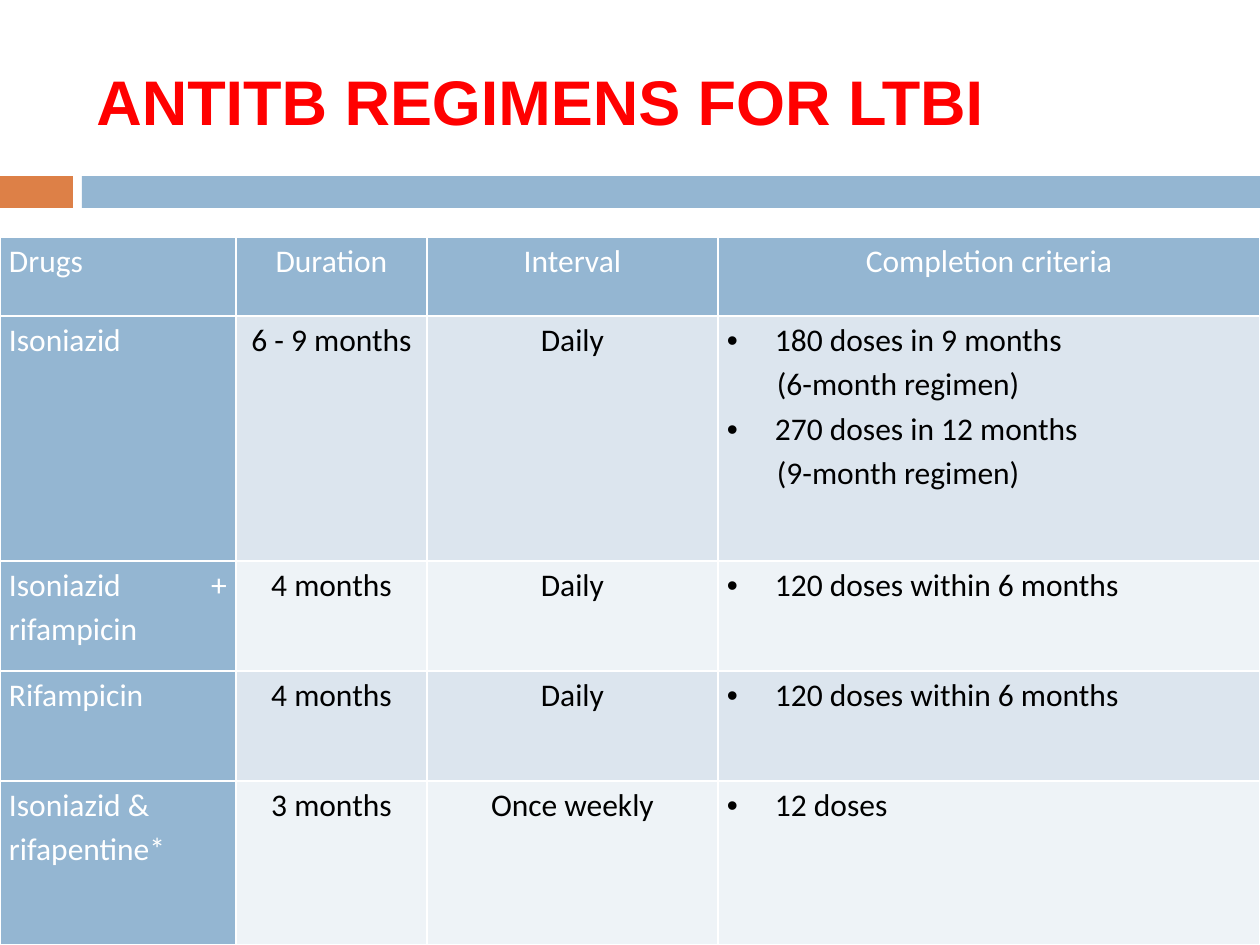
from dataclasses import dataclass

from lxml.etree import SubElement
from pptx import Presentation
from pptx.dml.color import RGBColor
from pptx.enum.shapes import MSO_SHAPE as Shape
from pptx.enum.text import MSO_ANCHOR as Anchor, PP_ALIGN as Align
from pptx.oxml import parse_xml
from pptx.oxml.ns import nsdecls, qn
from pptx.util import Emu, Pt

EMU_PER_PX = 914400 / 126

RED = RGBColor(0xFF, 0x00, 0x00)
ORANGE = RGBColor(0xDD, 0x80, 0x47)
BLUE = RGBColor(0x94, 0xB6, 0xD2)
BAND_DARK = RGBColor(0xDC, 0xE5, 0xEE)
BAND_LIGHT = RGBColor(0xEE, 0xF3, 0xF7)
WHITE = RGBColor(0xFF, 0xFF, 0xFF)
BLACK = RGBColor(0x00, 0x00, 0x00)

COLUMN_WIDTHS = (236, 191, 291, 542)
HEADINGS = ("Drugs", "Duration", "Interval", "Completion criteria")
HEADING_HEIGHT = 79
BULLET_INDENT = 48
CELL_MARGIN = 9


@dataclass(frozen=True)
class Bar:
    left: int
    width: int
    color: RGBColor


@dataclass(frozen=True)
class Line:
    text: str
    align: Align = Align.CENTER
    bullet: bool = False
    indent: int = 0


@dataclass(frozen=True)
class Criterion:
    doses: str
    note: str = ""


@dataclass(frozen=True)
class Regimen:
    drugs: str
    duration: str
    interval: str
    criteria: tuple[Criterion, ...]
    height: int
    drugs_align: Align = Align.JUSTIFY


BARS = (Bar(0, 73, ORANGE), Bar(82, 1178, BLUE))

WITHIN_SIX_MONTHS = (Criterion("120 doses within 6 months"),)
REGIMENS = (
    Regimen("Isoniazid", "6 - 9 months", "Daily",
            (Criterion("180 doses in 9 months", "(6-month regimen)"),
             Criterion("270 doses in 12 months", "(9-month regimen)")), 245),
    Regimen("Isoniazid + rifampicin", "4 months", "Daily", WITHIN_SIX_MONTHS, 110),
    Regimen("Rifampicin", "4 months", "Daily", WITHIN_SIX_MONTHS, 110),
    Regimen("Isoniazid & rifapentine*", "3 months", "Once weekly",
            (Criterion("12 doses"),), 164, Align.LEFT),
)


def px(length: int) -> Emu:
    return Emu(round(length * EMU_PER_PX))


def draw_bar(slide, bar: Bar) -> None:
    rect = slide.shapes.add_shape(Shape.RECTANGLE, px(bar.left), px(176), px(bar.width), px(32))
    rect.shadow.inherit = False
    rect.fill.solid()
    rect.fill.fore_color.rgb = bar.color
    rect.line.fill.background()


def draw_title(slide, text: str) -> None:
    title = slide.shapes.add_textbox(px(84), px(32), px(1124), px(136))
    frame = title.text_frame
    frame.word_wrap = True
    frame.vertical_anchor = Anchor.MIDDLE
    paragraph = frame.paragraphs[0]
    paragraph.text = text
    font = paragraph.font
    font.name, font.size, font.bold = "Arial", Pt(36), True
    font.color.rgb = RED


def set_borders(cell) -> None:
    properties = cell._tc.get_or_add_tcPr()
    for position, side in enumerate(("lnL", "lnR", "lnT", "lnB")):
        properties.insert(position, parse_xml(
            f'<a:{side} {nsdecls("a")} w="{Pt(1)}"><a:solidFill>'
            f'<a:srgbClr val="{WHITE}"/></a:solidFill></a:{side}>'))


def set_indent(paragraph, line: Line) -> None:
    properties = paragraph._p.get_or_add_pPr()
    properties.set("marL", str(px(line.indent)))
    properties.set("indent", str(-px(line.indent) if line.bullet else 0))
    if line.bullet:
        SubElement(properties, qn("a:buFont"), typeface="Arial")
        SubElement(properties, qn("a:buChar"), char="•")


def fill_cell(cell, lines: list[Line], fill: RGBColor, color: RGBColor) -> None:
    cell.margin_left = cell.margin_right = px(CELL_MARGIN)
    cell.margin_top = cell.margin_bottom = 0
    set_borders(cell)
    cell.fill.solid()
    cell.fill.fore_color.rgb = fill
    frame = cell.text_frame
    frame.text = "\n".join(line.text for line in lines)
    for paragraph, line in zip(frame.paragraphs, lines):
        paragraph.alignment = line.align
        paragraph.line_spacing = 1.15
        set_indent(paragraph, line)
        font = paragraph.font
        font.name, font.size, font.bold = "Calibri", Pt(18), False
        font.color.rgb = color


def criteria_lines(criteria: tuple[Criterion, ...]) -> list[Line]:
    lines = []
    for criterion in criteria:
        lines.append(Line(criterion.doses, Align.JUSTIFY, True, BULLET_INDENT))
        if criterion.note:
            lines.append(Line(criterion.note, Align.JUSTIFY, False, BULLET_INDENT + 2))
    return lines


def draw_table(slide) -> None:
    heights = [HEADING_HEIGHT] + [regimen.height for regimen in REGIMENS]
    table = slide.shapes.add_table(
        len(heights), len(COLUMN_WIDTHS), 0, px(237),
        px(sum(COLUMN_WIDTHS)), px(sum(heights))).table
    table.first_col = True
    for column, width in zip(table.columns, COLUMN_WIDTHS):
        column.width = px(width)
    for row, height in zip(table.rows, heights):
        row.height = px(height)

    # Heading row
    for index, heading in enumerate(HEADINGS):
        align = Align.CENTER if index else Align.LEFT
        fill_cell(table.cell(0, index), [Line(heading, align)], BLUE, WHITE)

    # One row per regimen, in alternating bands
    for row, regimen in enumerate(REGIMENS, start=1):
        band = BAND_DARK if row % 2 else BAND_LIGHT
        drugs = [Line(regimen.drugs, regimen.drugs_align)]
        fill_cell(table.cell(row, 0), drugs, BLUE, WHITE)
        details = ([Line(regimen.duration)], [Line(regimen.interval)],
                   criteria_lines(regimen.criteria))
        for column, lines in enumerate(details, start=1):
            fill_cell(table.cell(row, column), lines, band, BLACK)


def main() -> None:
    presentation = Presentation()
    presentation.slide_width, presentation.slide_height = px(1260), px(945)
    slide = presentation.slides.add_slide(presentation.slide_layouts[6])
    for bar in BARS:
        draw_bar(slide, bar)
    draw_title(slide, "ANTITB REGIMENS FOR LTBI")
    draw_table(slide)
    presentation.save("out.pptx")


if __name__ == "__main__":
    main()
